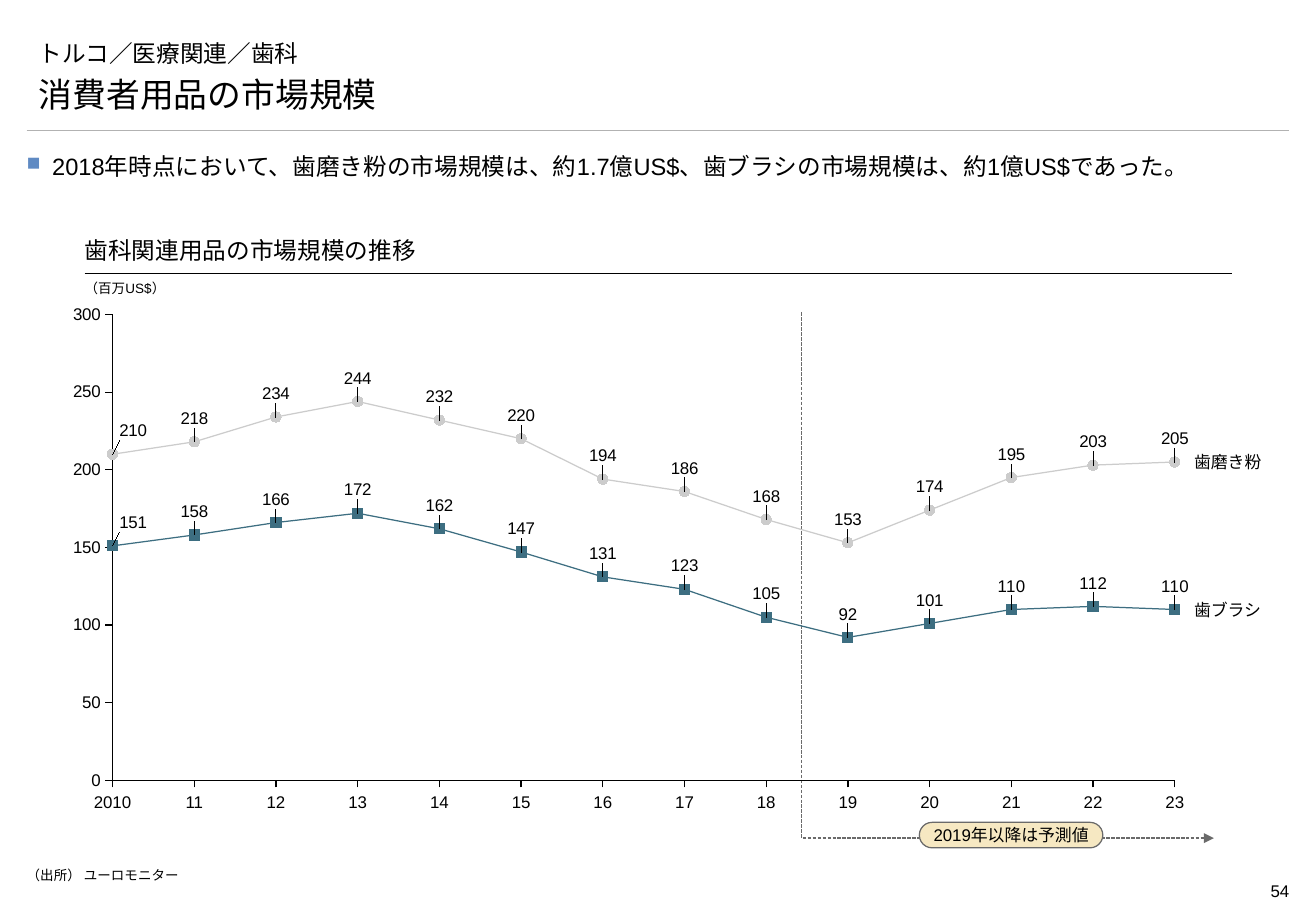
"""Build a slide on the Turkish dental consumer goods market."""
from dataclasses import dataclass

from lxml import etree
from pptx import Presentation
from pptx.chart.data import CategoryChartData
from pptx.dml.color import RGBColor
from pptx.enum.chart import XL_CHART_TYPE, XL_LABEL_POSITION, XL_MARKER_STYLE, XL_TICK_LABEL_POSITION, XL_TICK_MARK
from pptx.enum.dml import MSO_LINE
from pptx.enum.shapes import MSO_CONNECTOR, MSO_SHAPE
from pptx.enum.text import MSO_ANCHOR, PP_ALIGN
from pptx.oxml import parse_xml
from pptx.oxml.ns import nsdecls, qn
from pptx.util import Inches, Pt

LEFT, CENTER, RIGHT, JUSTIFY = PP_ALIGN.LEFT, PP_ALIGN.CENTER, PP_ALIGN.RIGHT, PP_ALIGN.JUSTIFY
TOP, MIDDLE, BOTTOM = MSO_ANCHOR.TOP, MSO_ANCHOR.MIDDLE, MSO_ANCHOR.BOTTOM
CIRCLE, SQUARE = XL_MARKER_STYLE.CIRCLE, XL_MARKER_STYLE.SQUARE
ON_POINT = XL_LABEL_POSITION.CENTER
OUTSIDE, NO_TICK = XL_TICK_MARK.OUTSIDE, XL_TICK_MARK.NONE
NO_LABELS = XL_TICK_LABEL_POSITION.NONE
LINE_MARKERS, STRAIGHT = XL_CHART_TYPE.LINE_MARKERS, MSO_CONNECTOR.STRAIGHT
ROUNDED, DASH = MSO_SHAPE.ROUNDED_RECTANGLE, MSO_LINE.SQUARE_DOT


@dataclass(frozen=True)
class Theme:
    """Colours, fonts and type sizes."""
    black: str = "000000"
    rule: str = "B2B2B2"
    bullet: str = "5F8AC3"
    forecast: str = "6A6A6A"
    pill: str = "F6E8C2"
    body: str = "Arial"
    heading: str = "Montserrat"
    title: int = 20
    lead: int = 14
    label: int = 10
    small: int = 8
    stroke: float = 0.75


THEME = Theme()
KICKER = "トルコ／医療関連／歯科"
TITLE = "消費者用品の市場規模"
MESSAGE = "2018年時点において、歯磨き粉の市場規模は、約1.7億US$、歯ブラシの市場規模は、約1億US$であった。"
CHART_TITLE = "歯科関連用品の市場規模の推移"
UNIT = "（百万US$）"
FORECAST = "2019年以降は予測値"
SOURCE = "（出所） ユーロモニター"
PAGE = "54"
YEARS = ["2010"] + [str(year) for year in range(11, 24)]
SERIES = [
    ("歯磨き粉", "CCCCCC", CIRCLE,
     [210, 218, 234, 244, 232, 220, 194, 186, 168, 153, 174, 195, 203, 205]),
    ("歯ブラシ", "3D6E81", SQUARE,
     [151, 158, 166, 172, 162, 147, 131, 123, 105, 92, 101, 110, 112, 110]),
]
AXIS_MAX, AXIS_STEP = 300, 50

WIDTH, HEIGHT = Inches(10.83), Inches(7.5)
COLUMN, ROW = WIDTH / 100, HEIGHT / 100
MARGIN, CONTENT = 2.03, 95.94
PANEL_LEFT, PANEL_WIDTH, PANEL_RULE = 6.43, 87.2, 30
CHART_LEFT, CHART_TOP, CHART_WIDTH, CHART_HEIGHT = 4.22, 33.07, 86.61, 54
PLOT = {"x": 0.05, "y": 0.027, "w": 0.932, "h": 0.947}
LABEL_HEIGHT = 2.27

deck = Presentation()
deck.slide_width, deck.slide_height = WIDTH, HEIGHT
slide = deck.slides.add_slide(deck.slide_layouts[6])


def place(left, top, width, height):
    """Turn grid units into slide lengths."""
    return [round(left * COLUMN), round(top * ROW), round(width * COLUMN), round(height * ROW)]


def rgb(code):
    """Return a colour from its hex code."""
    return RGBColor.from_string(code)


def write(box, text, size=THEME.label, font=THEME.body, align=LEFT, anchor=TOP,
          insets=(0, 0, 0, 0), wrap=True, bullet=None):
    """Fill a box with one formatted paragraph."""
    frame = box.text_frame
    frame.word_wrap, frame.vertical_anchor = wrap, anchor
    frame.margin_left, frame.margin_top, frame.margin_right, frame.margin_bottom = map(Inches, insets)
    para = frame.paragraphs[0]
    para.alignment = align
    if bullet:
        para.line_spacing, para.space_after = 1.1, Pt(2)
        props = para._p.get_or_add_pPr()
        props.set("marL", str(Inches(0.21)))
        props.set("indent", str(-Inches(0.21)))
        color = etree.SubElement(props, qn("a:buClr"))
        etree.SubElement(color, qn("a:srgbClr"), val=THEME.bullet)
        etree.SubElement(props, qn("a:buSzPct"), val="80000")
        etree.SubElement(props, qn("a:buChar"), char=bullet)
    span = para.add_run()
    span.text = text
    span.font.size, span.font.name = Pt(size), font
    span.font.color.rgb = rgb(THEME.black)


def add_text(text, left, top, width, height, **style):
    """Add a text box at a grid position."""
    write(slide.shapes.add_textbox(*place(left, top, width, height)), text, **style)


def stroke(line, color=THEME.black, width=THEME.stroke):
    """Colour a line and set its width."""
    line.color.rgb, line.width = rgb(color), Pt(width)


def add_rule(left, top, width, color, weight):
    """Add a horizontal line."""
    x, y, length, _ = place(left, top, width, 0)
    rule = slide.shapes.add_connector(STRAIGHT, x, y, x + length, y)
    stroke(rule.line, color, weight)
    etree.SubElement(rule._element.spPr, qn("a:effectLst"))


def manual_layout(**values):
    """Return a chart layout element."""
    layout = parse_xml(f'<c:layout {nsdecls("c")}><c:manualLayout/></c:layout>')
    for name, value in values.items():
        etree.SubElement(layout[0], qn(f"c:{name}"), val=str(value))
    return layout


def label_points(series, count):
    """Lift the value labels above their points and join them by leader lines."""
    labels = series.data_labels
    labels.show_value, labels.position = True, ON_POINT
    labels.number_format, labels.number_format_is_linked = "#,##0", False
    for index in range(count):
        point_label = series.points[index].data_label
        point_label.position = ON_POINT
        head = labels._element.findall(qn("c:dLbl"))[index].find(qn("c:idx"))
        number = parse_xml(f'<c:numFmt {nsdecls("c")} formatCode="#,##0" sourceLinked="0"/>')
        head.addnext(number)
        head.addnext(manual_layout(x=0 if index else 0.018, y=-0.047))
    labels._element.append(parse_xml(
        f'<c:extLst {nsdecls("c")}><c:ext uri="{{CE6537A1-D6FC-4f65-9D91-7224C49458BB}}" '
        'xmlns:c15="http://schemas.microsoft.com/office/drawing/2012/chart">'
        '<c15:showLeaderLines val="1"/></c:ext></c:extLst>'))


def add_market_chart():
    """Add the line chart of both markets."""
    data = CategoryChartData()
    data.categories = [str(number) for number in range(1, len(YEARS) + 1)]
    for name, _, _, values in SERIES:
        data.add_series(name, values)
    frame = slide.shapes.add_chart(
        LINE_MARKERS, *place(CHART_LEFT, CHART_TOP, CHART_WIDTH, CHART_HEIGHT), data)
    chart = frame.chart
    chart.has_legend = chart.has_title = False
    chart.font.size, chart.font.name = Pt(THEME.label), THEME.body
    chart.font.color.rgb = rgb(THEME.black)
    chart.plots[0].vary_by_categories = False
    area = chart._chartSpace.chart.plotArea
    for old in area.findall(qn("c:layout")):
        area.remove(old)
    area.insert(0, manual_layout(layoutTarget="inner", xMode="edge", yMode="edge", **PLOT))
    years, amounts = chart.category_axis, chart.value_axis
    for axis in (years, amounts):
        axis.has_major_gridlines = False
        axis.major_tick_mark, axis.minor_tick_mark = OUTSIDE, NO_TICK
        stroke(axis.format.line)
    years.tick_label_position = NO_LABELS
    amounts.minimum_scale, amounts.maximum_scale, amounts.major_unit = 0, AXIS_MAX, AXIS_STEP
    amounts.tick_labels.number_format = '#,##0;"-"#,##0'
    amounts.tick_labels.number_format_is_linked = False
    for old in amounts._element.findall(qn("c:crossBetween")):
        amounts._element.remove(old)
    amounts._element.find(qn("c:crosses")).addnext(
        parse_xml(f'<c:crossBetween {nsdecls("c")} val="midCat"/>'))
    for series, (_, color, marker, values) in zip(chart.plots[0].series, SERIES):
        series.smooth = False
        stroke(series.format.line, color)
        series.marker.style, series.marker.size = marker, 6
        series.marker.format.fill.solid()
        series.marker.format.fill.fore_color.rgb = rgb(color)
        stroke(series.marker.format.line, color)
        label_points(series, len(values))


def add_axis_names():
    """Write the years below the plot and the series names at its right."""
    plot_left = CHART_LEFT + PLOT["x"] * CHART_WIDTH
    step = PLOT["w"] * CHART_WIDTH / (len(YEARS) - 1)
    plot_height = PLOT["h"] * CHART_HEIGHT
    plot_bottom = CHART_TOP + PLOT["y"] * CHART_HEIGHT + plot_height
    for index, year in enumerate(YEARS):
        add_text(year, plot_left + index * step - 1.5, 86.93, 3, LABEL_HEIGHT, align=CENTER, wrap=False)
    for name, _, _, values in SERIES:
        top = plot_bottom - values[-1] / AXIS_MAX * plot_height - LABEL_HEIGHT / 2
        add_text(name, 90.74, top, 6.5, LABEL_HEIGHT, anchor=MIDDLE)


def add_forecast():
    """Mark the forecast years with a dashed arrow and a pill."""
    corners = [(60.9, 34.27), (60.9, 92), (92.24, 92)]
    start, *others = [place(x, y, 0, 0)[:2] for x, y in corners]
    builder = slide.shapes.build_freeform(*start, scale=1.0)
    builder.add_line_segments(others, close=False)
    arrow = builder.convert_to_shape()
    arrow.shadow.inherit = False
    arrow.fill.background()
    stroke(arrow.line, THEME.forecast)
    arrow.line.dash_style = DASH
    etree.SubElement(arrow.line._get_or_add_ln(), qn("a:tailEnd"), type="triangle")
    pill = slide.shapes.add_shape(ROUNDED, *place(69.86, 90.27, 13.94, 2.8))
    pill.adjustments[0] = 0.5
    pill.shadow.inherit = False
    pill.fill.solid()
    pill.fill.fore_color.rgb = rgb(THEME.pill)
    stroke(pill.line, THEME.forecast)
    write(pill, FORECAST, align=CENTER, anchor=MIDDLE, wrap=False)


add_rule(MARGIN, 14.27, CONTENT, THEME.rule, 0.25)
add_text(PAGE, 90.77, 96, 7.2, 3.6, align=RIGHT, insets=(0, 0.05, 0, 0.05))
for line_text, line_top, line_size in [(KICKER, 2.8, THEME.lead), (TITLE, 8, THEME.title)]:
    add_text(line_text, MARGIN, line_top, CONTENT, 5.2, size=line_size, font=THEME.heading,
             anchor=BOTTOM, insets=(0.1, 0.05, 0.1, 0.05))
add_text(MESSAGE, MARGIN, 16.4, CONTENT, 3.47, size=THEME.lead, align=JUSTIFY, bullet="■")
add_text(SOURCE, MARGIN, 95.2, CONTENT, 2.13, size=THEME.small)
add_rule(PANEL_LEFT, PANEL_RULE, PANEL_WIDTH, THEME.black, THEME.stroke)
add_text(CHART_TITLE, PANEL_LEFT, 25.95, PANEL_WIDTH, 4.13, size=THEME.lead, font=THEME.heading,
         anchor=BOTTOM, insets=(0, 0.05, 0, 0.08))
add_text(UNIT, PANEL_LEFT, PANEL_RULE, 8.4, 3.2, size=THEME.small, anchor=MIDDLE)
add_forecast()
add_market_chart()
add_axis_names()
deck.save("out.pptx")
